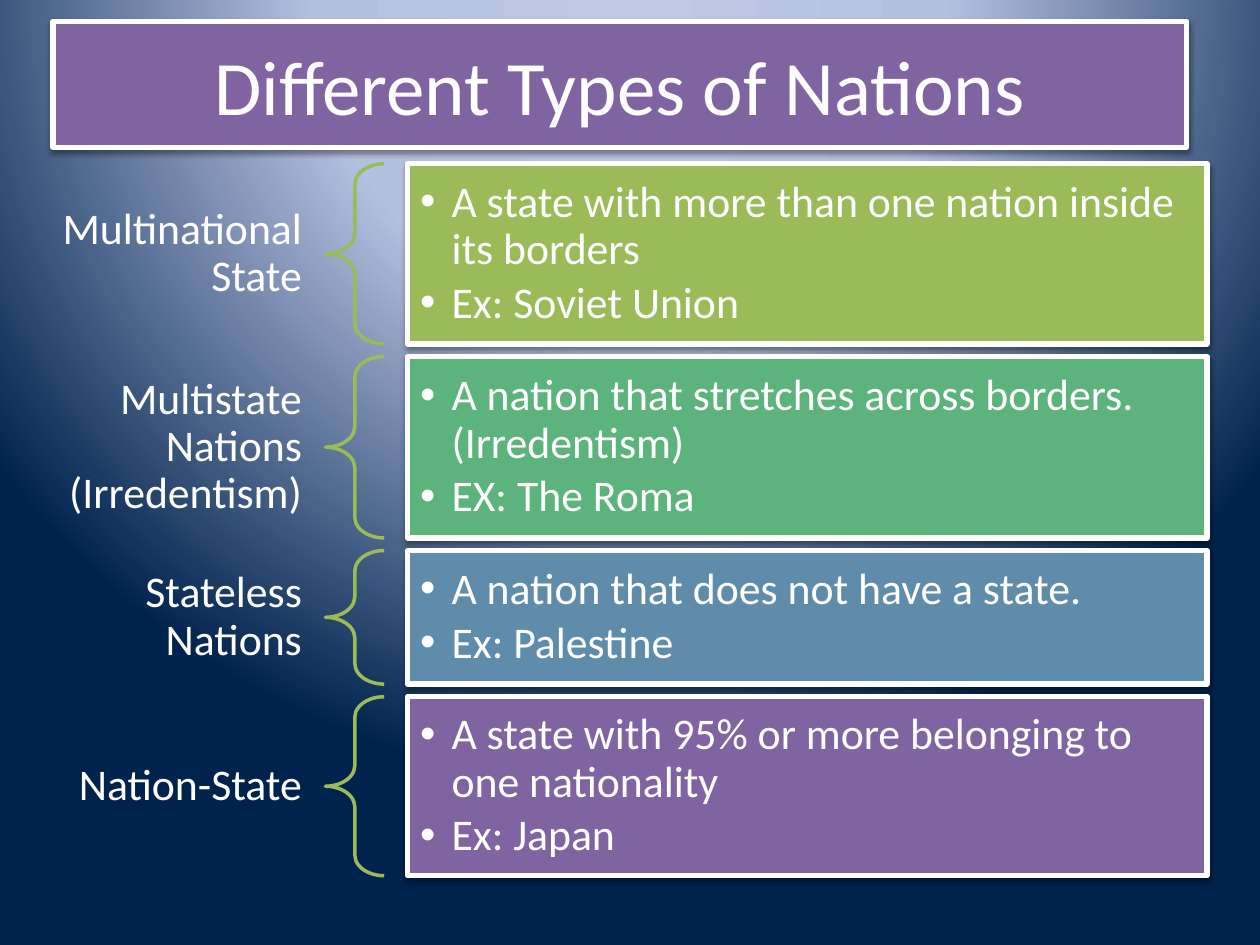
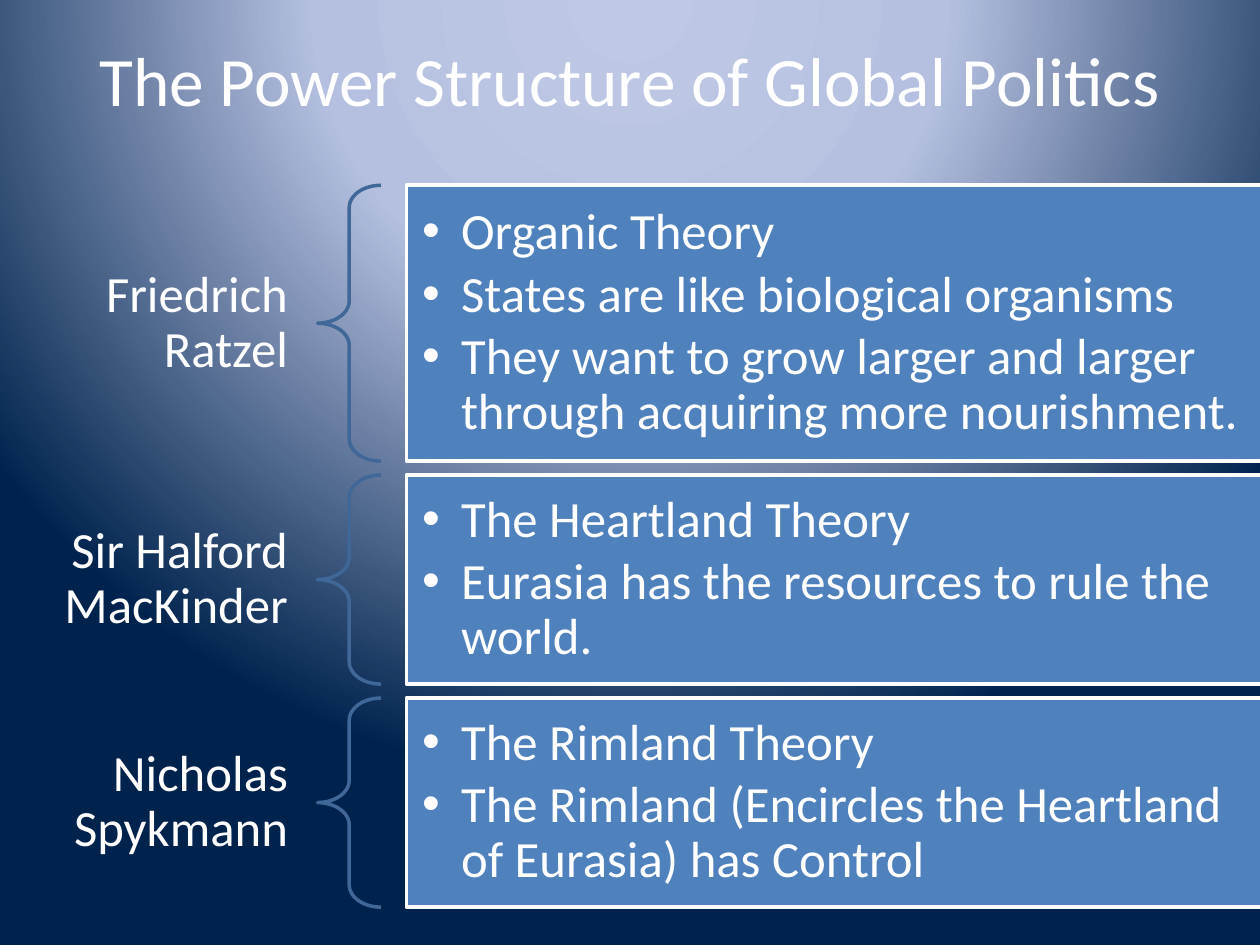
from lxml import etree
from pptx import Presentation
from pptx import util as u
from pptx.dml.color import RGBColor
from pptx.enum import shapes, text
from pptx.oxml import ns, parse_xml

HUES = {
    "white": "FFFFFF", "black": "000000", "glow": "BFC9E5", "haze": "B5C0E0",
    "navy": "00234D", "lime": "9BBB59", "green": "5CB37C", "steel": "608CAB",
    "plum": "8064A2", "blue": "4F81BD", "dusk": "3F6797",
}
FONT = "Calibri"
COLS, ROWS = 100, 75
WIDE, HIGH = u.Inches(10), u.Inches(7.5)
# Shares of a list's width: label, brace, gap, body
LABEL, BRACE, GAP, BODY = 0.25, 0.05, 0.02, 0.68
RIGHT, CENTER, LEFT = text.PP_ALIGN.RIGHT, text.PP_ALIGN.CENTER, text.PP_ALIGN.LEFT


def rgb(name):
    return RGBColor.from_string(HUES[name])


def grid(x, y, w, h):
    """Turn columns and rows into slide lengths."""
    return (int(x * WIDE / COLS), int(y * HIGH / ROWS),
            int(w * WIDE / COLS), int(h * HIGH / ROWS))


def backdrop(slide):
    stops = "".join(
        f'<a:gs pos="{pos * 1000}"><a:srgbClr val="{HUES[name]}"/></a:gs>'
        for pos, name in ((0, "glow"), (40, "haze"), (100, "navy")))
    slide.element.cSld.insert(0, parse_xml(
        f'<p:bg {ns.nsdecls("p", "a")}><p:bgPr><a:gradFill><a:gsLst>{stops}</a:gsLst>'
        '<a:path path="circle"><a:fillToRect l="50000" t="-80000" r="50000" b="180000"/>'
        '</a:path></a:gradFill><a:effectLst/></p:bgPr></p:bg>'))


def shade(shape):
    """Give a shape a soft shadow straight below it."""
    old = shape._element.spPr.find(ns.qn("a:effectLst"))
    old.append(parse_xml(
        f'<a:outerShdw {ns.nsdecls("a")} blurRad="{u.Pt(3.1)}" dist="{u.Pt(1.6)}"'
        f' dir="5400000" rotWithShape="0"><a:srgbClr val="{HUES["black"]}">'
        '<a:alpha val="38000"/></a:srgbClr></a:outerShdw>'))


def panel(slide, box, fill, line, shadow):
    shape = slide.shapes.add_shape(shapes.MSO_SHAPE.RECTANGLE, *grid(*box))
    shape.shadow.inherit = False
    shape.fill.solid()
    shape.fill.fore_color.rgb = rgb(fill)
    shape.line.color.rgb = rgb("white")
    shape.line.width = u.Pt(line)
    if shadow:
        shade(shape)
    return shape


def bullet(para, hang):
    props = para._p.get_or_add_pPr()
    props.set("marL", str(u.Inches(hang)))
    props.set("indent", str(-u.Inches(hang)))
    etree.SubElement(props, ns.qn("a:buFont"), typeface="Arial")
    etree.SubElement(props, ns.qn("a:buChar"), char="•")


def write(shape, lines, size, align, pad=(0.1, 0.05), space=None, hang=0):
    frame = shape.text_frame
    frame.word_wrap = True
    frame.vertical_anchor = text.MSO_ANCHOR.MIDDLE
    frame.margin_left = frame.margin_right = u.Inches(pad[0])
    frame.margin_top = frame.margin_bottom = u.Inches(pad[1])
    frame.text = "\n".join(lines)
    for para in frame.paragraphs:
        if hang:
            bullet(para, hang)
            para.space_after = u.Pt(round(0.15 * size, 1))
        para.alignment = align
        if space:
            para.line_spacing = space
        font = para.font
        font.name, font.size, font.color.rgb = FONT, u.Pt(size), rgb("white")


def entry(slide, box, label, points, fill, look):
    """Place one row: label, brace and bulleted panel."""
    x, y, w, h = box
    size, hang = look["size"], look["hang"]
    name = slide.shapes.add_textbox(*grid(x, y, w * LABEL, h))
    write(name, [label], size, RIGHT, (0.75 * hang, 0.28 * hang), 0.9)

    brace = slide.shapes.add_shape(
        shapes.MSO_SHAPE.LEFT_BRACE, *grid(x + w * LABEL, y, w * BRACE, h))
    brace.shadow.inherit = False
    brace.adjustments[0], brace.adjustments[1] = 0.35, 0.5
    brace.fill.background()
    brace.line.color.rgb = rgb(look["brace"])
    brace.line.width = u.Pt(2)

    left = x + w * (LABEL + BRACE + GAP)
    body = panel(slide, (left, y, w * BODY, h), fill, look["line"], look["shadow"])
    write(body, points, size, LEFT, (0.4 * hang, 0.4 * hang), 0.9, hang)


def stack(slide, box, gap, rows, look):
    """Stack rows from the top of a box (left, top, width)."""
    x, y, w = box
    for high, fill, label, points in rows:
        entry(slide, (x, y, w, high), label, points, fill, look)
        y += high + gap


def nations(slide):
    rows = (
        (14.3, "lime", "Multinational State",
         ["A state with more than one nation inside its borders", "Ex: Soviet Union"]),
        (14.4, "green", "Multistate Nations (Irredentism)",
         ["A nation that stretches across borders. (Irredentism)", "EX: The Roma"]),
        (10.6, "steel", "Stateless Nations",
         ["A nation that does not have a state.", "Ex: Palestine"]),
        (14.2, "plum", "Nation-State",
         ["A state with 95% or more belonging to one nationality", "Ex: Japan"]),
    )
    look = dict(size=25, hang=0.25, brace="lime", line=3, shadow=True)
    stack(slide, (2.5, 13, 93.3), 1, rows, look)
    title = panel(slide, (4.2, 1.7, 90, 10), "plum", 3, True)
    write(title, ["Different Types of Nations"], 44, CENTER)


def power(slide):
    rows = (
        (21.9, "blue", "Friedrich Ratzel",
         ["Organic Theory", "States are like biological organisms",
          "They want to grow larger and larger through acquiring more nourishment."]),
        (16.6, "blue", "Sir Halford MacKinder",
         ["The Heartland Theory", "Eurasia has the resources to rule the world."]),
        (16.6, "blue", "Nicholas Spykmann",
         ["The Rimland Theory",
          "The Rimland (Encircles the Heartland of Eurasia) has Control"]),
    )
    look = dict(size=29, hang=0.31, brace="dusk", line=2, shadow=False)
    title = slide.shapes.add_textbox(*grid(5, 0, 90, 12.5))
    write(title, ["The Power Structure of Global Politics"], 39.6, CENTER)
    stack(slide, (0, 14.7, 100.8), 1.1, rows, look)


def main():
    deck = Presentation()
    deck.slide_width, deck.slide_height = WIDE, HIGH
    for build in (nations, power):
        slide = deck.slides.add_slide(deck.slide_layouts[6])
        backdrop(slide)
        build(slide)
    deck.save("out.pptx")


if __name__ == "__main__":
    main()
